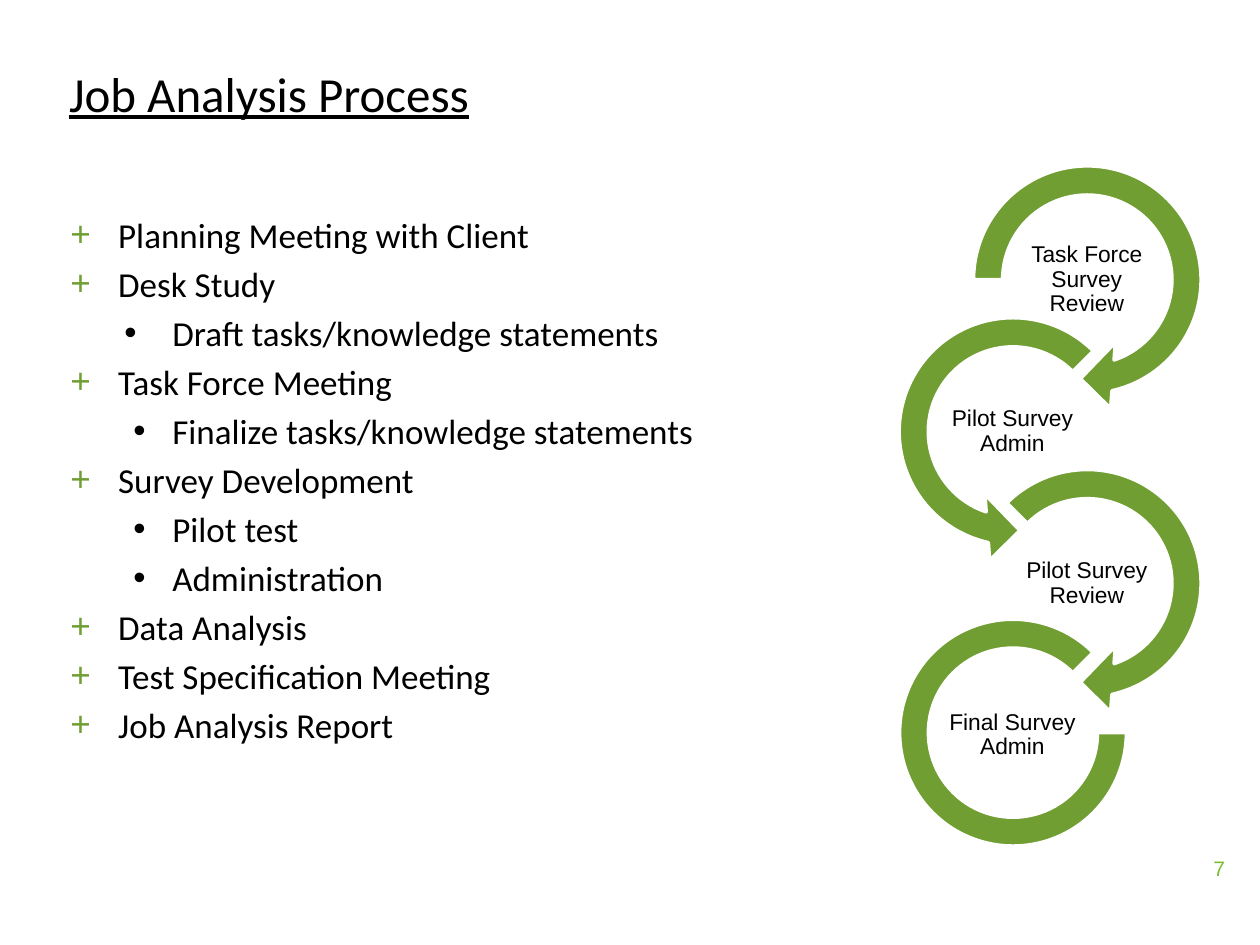
from dataclasses import dataclass
from typing import Any

from lxml.etree import SubElement
from pptx import Presentation
from pptx.dml.color import RGBColor
from pptx.enum.shapes import MSO_SHAPE
from pptx.enum.text import MSO_ANCHOR, PP_ALIGN
from pptx.oxml.ns import qn
from pptx.util import Inches, Pt


@dataclass(frozen=True)
class Theme:
    green: str = "709E32"
    lime: str = "7BBE30"
    black: str = "000000"
    white: str = "FFFFFF"
    head: str = "Calibri"
    sans: str = "Arial"
    title: int = 28
    body: int = 20
    label: int = 13
    page: int = 12


@dataclass(frozen=True)
class Item:
    text: str
    level: int = 0
    hang: float = 0.38


@dataclass(frozen=True)
class Ring:
    """Outline of a step, placed relative to its label."""
    kind: MSO_SHAPE
    adjust: tuple[float, ...]
    left: float = -0.46
    top: float = -0.76
    size: float = 2.1


@dataclass(frozen=True)
class Step:
    text: str
    ring: Ring


THEME = Theme()
INDENT = (0.38, 0.81)
ITEMS = (
    Item("Planning Meeting with Client"),
    Item("Desk Study"),
    Item("Draft tasks/knowledge statements", 1),
    Item("Task Force Meeting"),
    Item("Finalize tasks/knowledge statements", 1, 0.31),
    Item("Survey Development"),
    Item("Pilot test", 1, 0.31),
    Item("Administration", 1, 0.31),
    Item("Data Analysis"),
    Item("Test Specification Meeting"),
    Item("Job Analysis Report"),
)
RIGHT, LEFT = MSO_SHAPE.CIRCULAR_ARROW, MSO_SHAPE.LEFT_CIRCULAR_ARROW
STEPS = (
    Step("Task Force Survey Review", Ring(RIGHT, (0.11, 11.42, 45, 108, 0.125))),
    Step("Pilot Survey Admin", Ring(LEFT, (0.11, 11.42, 63, 189, 0.125))),
    Step("Pilot Survey Review", Ring(RIGHT, (0.11, 11.42, 45, 135, 0.125))),
    Step("Final Survey Admin",
         Ring(MSO_SHAPE.BLOCK_ARC, (0, 189, 0.127), -0.31, -0.63, 1.8)),
)
LANES = (8.04, 7.45)
TOP, PITCH = 1.93, 1.205


def apply(target: Any, **values: Any) -> None:
    for name, value in values.items():
        setattr(target, name, value)


def style(para: Any, face: str, size: int, color: str, **more: Any) -> None:
    apply(para.font, name=face, size=Pt(size), **more)
    para.font.color.rgb = RGBColor.from_string(color)


def add_box(slide: Any, left: float, top: float, width: float, height: float) -> Any:
    box = slide.shapes.add_textbox(*map(Inches, (left, top, width, height)))
    apply(box.text_frame, word_wrap=True, vertical_anchor=MSO_ANCHOR.MIDDLE)
    return box.text_frame


def add_bullet(para: Any, item: Item) -> None:
    props = para._p.get_or_add_pPr()
    props.set("marL", str(Inches(INDENT[item.level])))
    props.set("indent", str(-Inches(item.hang)))
    if item.level:
        props.set("lvl", str(item.level))
    tint = SubElement(props, qn("a:buClr"))
    color = THEME.black if item.level else THEME.green
    SubElement(tint, qn("a:srgbClr")).set("val", color)
    SubElement(props, qn("a:buFont")).set("typeface", THEME.sans)
    SubElement(props, qn("a:buChar")).set("char", "•" if item.level else "+")


def add_list(slide: Any) -> None:
    frame = add_box(slide, 0.46, 1.33, 9, 4.95)
    for row, item in enumerate(ITEMS):
        para = frame.add_paragraph() if row else frame.paragraphs[0]
        para.text = item.text
        add_bullet(para, item)
        if row:
            para.space_before = Pt(THEME.body * 0.2)
        style(para, THEME.head, THEME.body, THEME.black)


def add_ring(slide: Any, ring: Ring, left: float, top: float) -> None:
    place = (left + ring.left, top + ring.top, ring.size, ring.size)
    shape = slide.shapes.add_shape(ring.kind, *map(Inches, place))
    shape.shadow.inherit = False
    for spot, value in enumerate(ring.adjust):
        shape.adjustments[spot] = value
    shape.fill.solid()
    shape.fill.fore_color.rgb = RGBColor.from_string(THEME.green)
    shape.line.color.rgb = RGBColor.from_string(THEME.white)
    shape.line.width = Pt(2)


def add_step(slide: Any, row: int, step: Step) -> None:
    left, top = LANES[row % 2], TOP + row * PITCH
    add_ring(slide, step.ring, left, top)
    frame = add_box(slide, left, top, 1.17, 0.58)
    inset = Inches(0.01)
    apply(frame, margin_left=inset, margin_right=inset,
          margin_top=inset, margin_bottom=inset)
    para = frame.paragraphs[0]
    apply(para, text=step.text, alignment=PP_ALIGN.CENTER, line_spacing=0.9)
    style(para, THEME.sans, THEME.label, THEME.black)


def main() -> None:
    deck = Presentation()
    apply(deck, slide_width=Inches(10), slide_height=Inches(7.5))
    slide = deck.slides.add_slide(deck.slide_layouts[6])

    title = add_box(slide, 0.45, 0.3, 6.67, 0.87).paragraphs[0]
    title.text = "Job Analysis Process"
    style(title, THEME.head, THEME.title, THEME.black, underline=True)

    page = add_box(slide, 8.75, 6.69, 1.07, 0.4).paragraphs[0]
    apply(page, text="7", alignment=PP_ALIGN.RIGHT)
    style(page, THEME.sans, THEME.page, THEME.lime)

    add_list(slide)
    for row, step in enumerate(STEPS):
        add_step(slide, row, step)
    deck.save("out.pptx")


if __name__ == "__main__":
    main()
